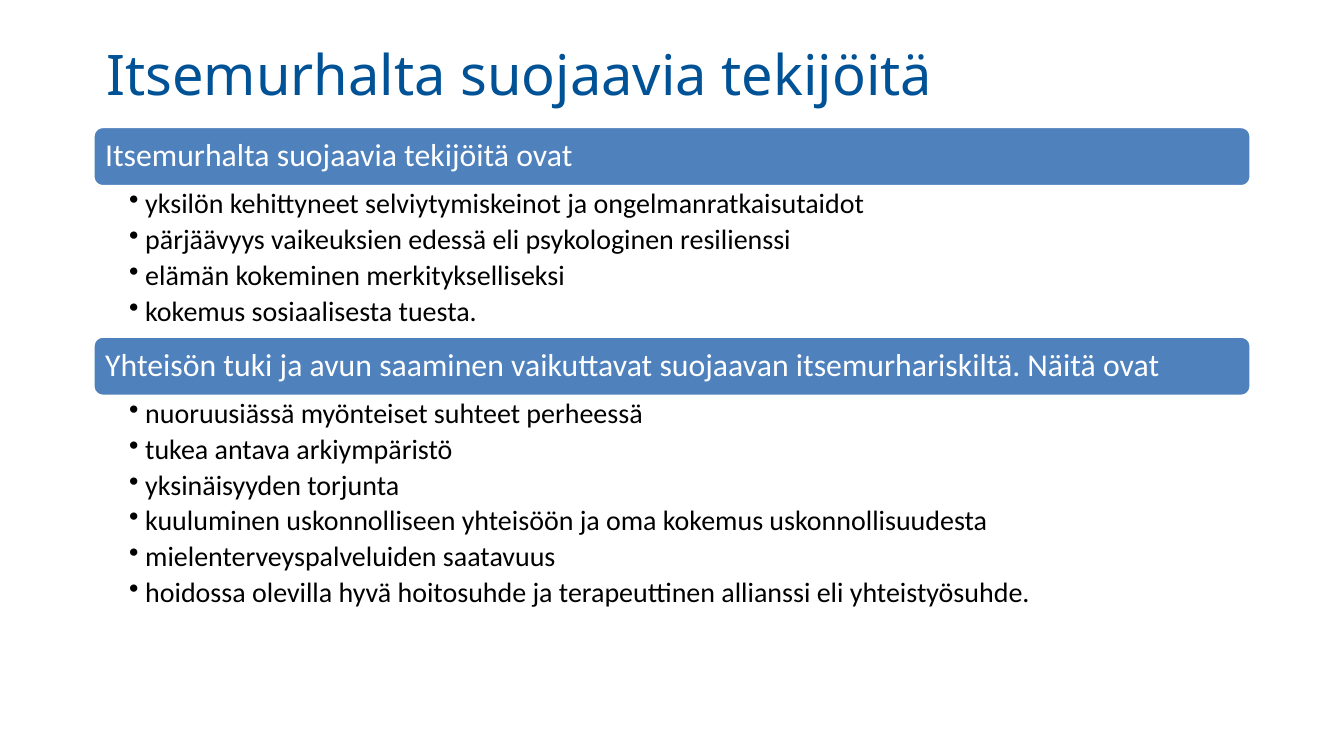
from dataclasses import dataclass

from lxml.etree import SubElement
from pptx import Presentation
from pptx.dml.color import RGBColor
from pptx.enum.shapes import MSO_SHAPE
from pptx.enum.text import MSO_ANCHOR, MSO_AUTO_SIZE, PP_ALIGN
from pptx.oxml.ns import qn
from pptx.util import Inches, Pt


@dataclass(frozen=True)
class Theme:
    title_color: RGBColor = RGBColor.from_string("005296")
    band_color: RGBColor = RGBColor.from_string("4F81BD")
    white: RGBColor = RGBColor.from_string("FFFFFF")
    black: RGBColor = RGBColor.from_string("000000")
    title_font: str = "Noto Sans"
    body_font: str = "Calibri"
    title_size: int = 30
    heading_size: int = 17
    factor_size: int = 15


theme = Theme()


def write(paragraph, text, *, size, color, font=theme.body_font, spacing=0.9, after=0, bullet=False):
    if bullet:
        paragraph.level = 1
        properties = paragraph._p.get_or_add_pPr()
        properties.set("marL", str(Inches(0.12)))
        properties.set("indent", str(-Inches(0.12)))
        SubElement(properties, qn("a:buChar")).set("char", "•")
    paragraph.alignment = PP_ALIGN.LEFT
    paragraph.line_spacing = spacing
    paragraph.space_before = Pt(0)
    paragraph.space_after = Pt(after)
    run = paragraph.add_run()
    run.text = text
    run.font.name = font
    run.font.size = Pt(size)
    run.font.color.rgb = color
    SubElement(paragraph._p, qn("a:endParaRPr")).set("sz", str(size * 100))


sections = [
    (0.94, 1.12, "Itsemurhalta suojaavia tekijöitä ovat", [
        "yksilön kehittyneet selviytymiskeinot ja ongelmanratkaisutaidot",
        "pärjäävyys vaikeuksien edessä eli psykologinen resilienssi",
        "elämän kokeminen merkitykselliseksi",
        "kokemus sosiaalisesta tuesta.",
    ]),
    (2.5, 1.92, "Yhteisön tuki ja avun saaminen vaikuttavat suojaavan itsemurhariskiltä. Näitä ovat", [
        "nuoruusiässä myönteiset suhteet perheessä",
        "tukea antava arkiympäristö",
        "yksinäisyyden torjunta",
        "kuuluminen uskonnolliseen yhteisöön ja oma kokemus uskonnollisuudesta",
        "mielenterveyspalveluiden saatavuus",
        "hoidossa olevilla hyvä hoitosuhde ja terapeuttinen allianssi eli yhteistyösuhde.",
    ]),
]
left, width, band_height = Inches(0.69), Inches(8.62), Inches(0.45)

presentation = Presentation()
presentation.slide_width = Inches(10)
presentation.slide_height = Inches(10 * 9 / 16)
slide = presentation.slides.add_slide(presentation.slide_layouts[5])

title = slide.shapes.title
title.left, title.top, title.width, title.height = left, Inches(0.24), width, Inches(0.61)
title.text_frame.auto_size = MSO_AUTO_SIZE.NONE
title.text_frame.vertical_anchor = MSO_ANCHOR.MIDDLE
write(title.text_frame.paragraphs[0], "Itsemurhalta suojaavia tekijöitä",
      size=theme.title_size, color=theme.title_color, font=theme.title_font, spacing=1.0)

for top, list_height, heading, factors in sections:
    band = slide.shapes.add_shape(MSO_SHAPE.ROUNDED_RECTANGLE, left, Inches(top), width, band_height)
    band.shadow.inherit = False
    band.fill.solid()
    band.fill.fore_color.rgb = theme.band_color
    band.line.color.rgb = theme.white
    band.line.width = Pt(2)
    heading_frame = band.text_frame
    heading_frame.word_wrap = True
    heading_frame.vertical_anchor = MSO_ANCHOR.MIDDLE
    heading_frame.margin_left = heading_frame.margin_right = Inches(0.07)
    write(heading_frame.paragraphs[0], heading, size=theme.heading_size, color=theme.white)

    factor_list = slide.shapes.add_textbox(left, Inches(top) + band_height, width, Inches(list_height))
    factor_frame = factor_list.text_frame
    factor_frame.word_wrap = True
    factor_frame.margin_left, factor_frame.margin_right = Inches(0.27), Inches(0.12)
    factor_frame.margin_top = factor_frame.margin_bottom = Inches(0.02)
    for index, factor in enumerate(factors):
        paragraph = factor_frame.add_paragraph() if index else factor_frame.paragraphs[0]
        write(paragraph, factor, size=theme.factor_size, color=theme.black, after=3, bullet=True)

presentation.save("out.pptx")
